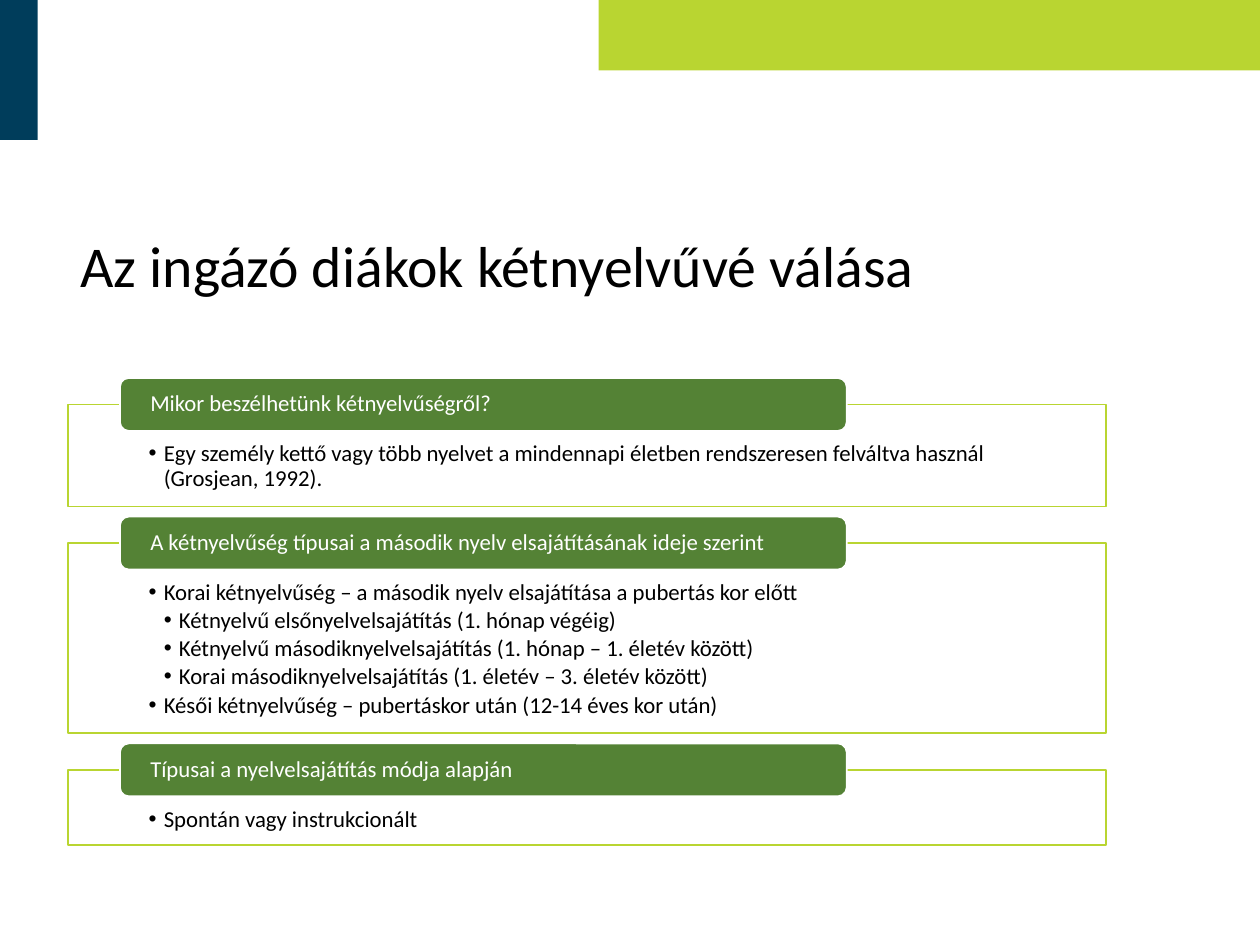
from lxml import etree
from pptx import Presentation
from pptx.dml.color import RGBColor
from pptx.enum.shapes import MSO_SHAPE
from pptx.enum.text import MSO_ANCHOR, PP_ALIGN
from pptx.oxml.ns import qn
from pptx.util import Inches, Pt

RECTANGLE = MSO_SHAPE.RECTANGLE
ROUNDED = MSO_SHAPE.ROUNDED_RECTANGLE
TOP, MIDDLE = MSO_ANCHOR.TOP, MSO_ANCHOR.MIDDLE
LEFT = PP_ALIGN.LEFT

LIME = RGBColor(0xB9, 0xD5, 0x31)
NAVY = RGBColor(0x00, 0x3D, 0x5B)
GREEN = RGBColor(0x54, 0x82, 0x35)
WHITE = RGBColor(0xFF, 0xFF, 0xFF)
BLACK = RGBColor(0x00, 0x00, 0x00)

TITLE = "Az ingázó diákok kétnyelvűvé válása"
SECTIONS = [
    ("Mikor beszélhetünk kétnyelvűségről?", 0.81, [
        (1, "Egy személy kettő vagy több nyelvet a mindennapi életben "
            "rendszeresen felváltva használ (Grosjean, 1992)."),
    ]),
    ("A kétnyelvűség típusai a második nyelv elsajátításának ideje szerint", 1.51, [
        (1, "Korai kétnyelvűség – a második nyelv elsajátítása a pubertás kor előtt"),
        (2, "Kétnyelvű elsőnyelvelsajátítás (1. hónap végéig)"),
        (2, "Kétnyelvű másodiknyelvelsajátítás (1. hónap – 1. életév között)"),
        (2, "Korai másodiknyelvelsajátítás (1. életév – 3. életév között)"),
        (1, "Késői kétnyelvűség – pubertáskor után (12-14 éves kor után)"),
    ]),
    ("Típusai a nyelvelsajátítás módja alapján", 0.6, [
        (1, "Spontán vagy instrukcionált"),
    ]),
]
SECTION_GAP = 0.29
HEADER_HEIGHT = 0.42
BULLET_INDENT = 0.12


def apply_format(target, values):
    """Set every attribute in values on the target."""
    for name, value in values.items():
        setattr(target, name, value)


def add_box(slide, kind, box, fill, line=None):
    """Add a flat filled shape in the box, outlined if a line colour is given."""
    shape = slide.shapes.add_shape(kind, *map(Inches, box))
    shape.shadow.inherit = False
    shape.fill.solid()
    shape.fill.fore_color.rgb = fill
    if line is None:
        shape.line.fill.background()
    else:
        shape.line.color.rgb = line
        shape.line.width = Pt(1)
    return shape


def set_frame(shape, anchor, left, top, right, bottom):
    """Set wrapping, anchor and insets, and return the text frame."""
    frame = shape.text_frame
    apply_format(frame, {
        "word_wrap": True, "vertical_anchor": anchor,
        "margin_left": Inches(left), "margin_top": Inches(top),
        "margin_right": Inches(right), "margin_bottom": Inches(bottom),
    })
    return frame


def write_paragraph(paragraph, text, size, color, space_after=0):
    """Fill a left-aligned paragraph with text in the slide font."""
    paragraph.text = text
    apply_format(paragraph, {
        "alignment": LEFT, "line_spacing": 0.9, "space_after": Pt(space_after),
    })
    apply_format(paragraph.font, {"name": "Calibri", "size": Pt(size)})
    paragraph.font.color.rgb = color


def add_bullet(paragraph, level):
    """Give the paragraph a hanging round bullet at its level."""
    properties = paragraph._p.get_or_add_pPr()
    properties.set("marL", str(Inches(BULLET_INDENT * level)))
    properties.set("indent", str(-Inches(BULLET_INDENT)))
    etree.SubElement(properties, qn("a:buFont"), typeface="Arial")
    etree.SubElement(properties, qn("a:buChar"), char="•")


def add_decoration(slide):
    """Add the lime band and the navy tab at the top of the slide."""
    add_box(slide, RECTANGLE, (4.75, 0, 5.25, 0.56), LIME)
    add_box(slide, RECTANGLE, (0, 0, 0.3, 1.11), NAVY)


def add_title(slide, box):
    """Add the slide title, centred vertically in the box."""
    shape = slide.shapes.add_textbox(*map(Inches, box))
    frame = set_frame(shape, MIDDLE, 0.1, 0.05, 0.1, 0.05)
    write_paragraph(frame.paragraphs[0], TITLE, 33, BLACK)


def add_section(slide, box, heading, items):
    """Add a bulleted panel with its heading straddling the top edge."""
    left, top, width, height = box
    panel = add_box(slide, RECTANGLE, box, WHITE, LIME)
    color = panel.fill._xPr.find(qn("a:solidFill"))[0]
    etree.SubElement(color, qn("a:alpha"), val="90000")
    frame = set_frame(panel, TOP, 0.64, 0.3, 0.64, 0.1)
    for index, (level, text) in enumerate(items):
        paragraph = frame.add_paragraph() if index else frame.paragraphs[0]
        add_bullet(paragraph, level)
        write_paragraph(paragraph, text, 13, BLACK, space_after=2)

    header_box = (left + width * 0.05, top - HEADER_HEIGHT / 2,
                  width * 0.7, HEADER_HEIGHT)
    header = add_box(slide, ROUNDED, header_box, GREEN, WHITE)
    frame = set_frame(header, MIDDLE, 0.22, 0, 0.22, 0)
    write_paragraph(frame.paragraphs[0], heading, 13, WHITE)


def add_sections(slide, left, top, width):
    """Stack the sections downwards with equal gaps."""
    for heading, height, items in SECTIONS:
        add_section(slide, (left, top, width, height), heading, items)
        top += height + SECTION_GAP


def main():
    """Build the slide and save it."""
    presentation = Presentation()
    presentation.slide_width = Inches(10)
    presentation.slide_height = Inches(7.5)
    slide = presentation.slides.add_slide(presentation.slide_layouts[6])
    add_decoration(slide)
    add_title(slide, (0.54, 1.41, 8.24, 1.45))
    add_sections(slide, 0.54, 3.21, 8.24)
    presentation.save("out.pptx")


if __name__ == "__main__":
    main()
